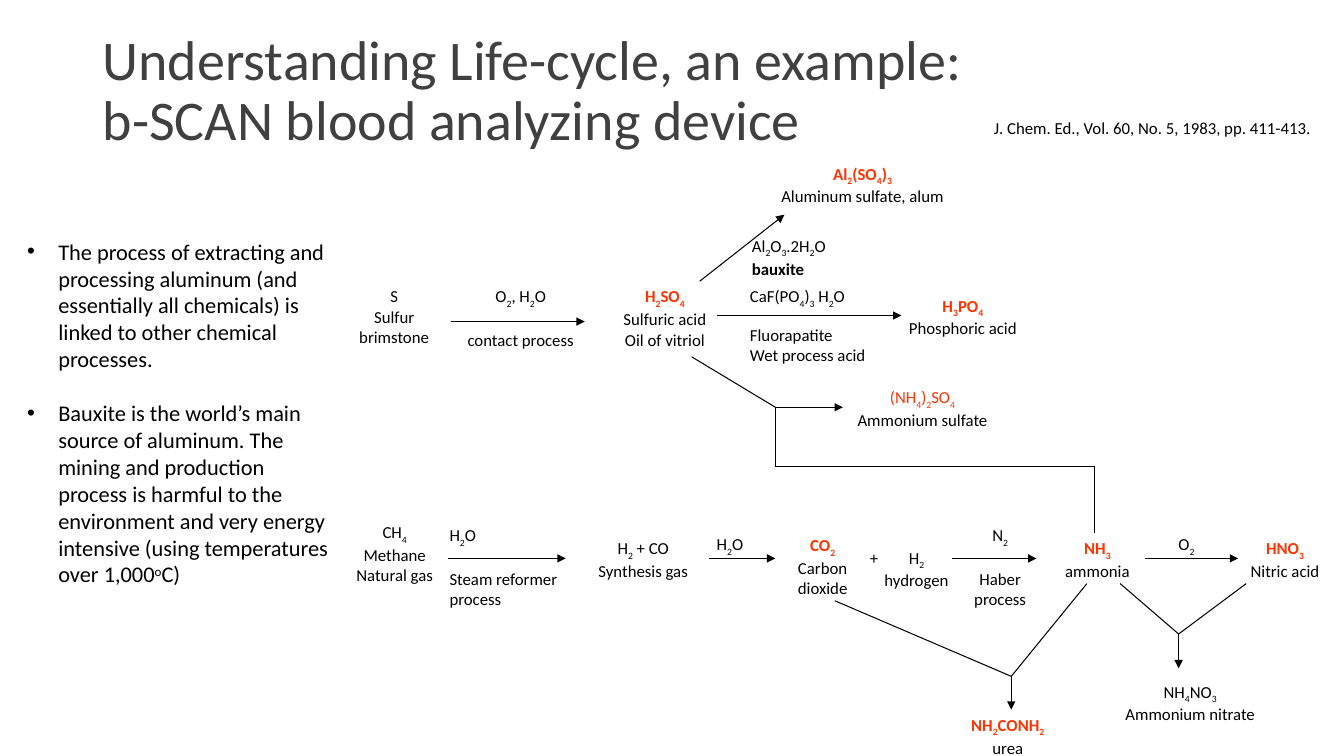
import collections
import itertools

import pptx
import pptx.dml.color
import pptx.enum.shapes
import pptx.enum.text
import pptx.oxml
import pptx.oxml.ns
import pptx.util

Box = collections.namedtuple("Box", "left top width height")
CELL = 0.1
ALIGN = {"left": pptx.enum.text.PP_ALIGN.LEFT, "center": pptx.enum.text.PP_ALIGN.CENTER}
PLAIN = {"size": 12, "color": "000000", "bold": False, "name": "Calibri"}
BOLD = {**PLAIN, "bold": True}
SALT = {**PLAIN, "color": "FF3300"}
PRODUCT = {**SALT, "bold": True}
TITLE = {**PLAIN, "size": 40, "color": "404040"}
BODY = {**PLAIN, "size": 16}
SHIFTS = {"_": "-25000", "^": "30000"}

SULFUR_LABELS = [
    (0.6, 12.9, 9, ["S", "Sulfur", "brimstone"], {}),
    (11.3, 12.9, 12.7, ["O_2, H_2O", "contact process"], {"gap": 14.6}),
    (26.8, 12.9, 10.3, ["H_2SO_4", "Sulfuric acid", "Oil of vitriol"], {"head": PRODUCT}),
    (39.6, 7.9, 9.6, ["Al_2O_3.2H_2O", "bauxite"], {"rest": BOLD, "align": "left"}),
    (42.4, 0.7, 18.3, ["Al_2(SO_4)_3", "Aluminum sulfate, alum"], {"head": PRODUCT}),
    (39.4, 12.9, 13.6, ["CaF(PO_4)_3 H_2O", "Fluorapatite", "Wet process acid"],
     {"align": "left", "gap": 11}),
    (55.1, 13.8, 12.8, ["H_3PO_4", "Phosphoric acid"], {"head": PRODUCT}),
    (50, 22.9, 15, ["(NH_4)_2SO_4", "Ammonium sulfate"], {"head": SALT}),
]
SULFUR_ROUTES = [
    ([(10.7, 16.9), (24, 16.9)], True),
    ([(35.4, 12.9), (43.8, 6.3)], True),
    ([(37.1, 16.3), (55.4, 16.3)], True),
    ([(34.6, 20.4), (42.9, 25.4), (49.6, 25.4)], True),
    ([(42.9, 25.4), (42.9, 31.3), (74.6, 31.3), (74.6, 37.9)], False),
]
AMMONIA_LABELS = [
    (0.3, 1.3, 9.7, ["CH_4", "Methane", "Natural gas"], {}),
    (9.6, 1.6, 13.2, ["H_2O", "Steam reformer", "process"], {"align": "left", "gap": 14.6}),
    (24.3, 2.9, 11, ["H_2 + CO", "Synthesis gas"], {}),
    (36.1, 2.5, 4.8, ["H_2O"], {"align": "left"}),
    (44.1, 2.6, 7, ["CO_2", "Carbon", "dioxide"], {"head": PRODUCT}),
    (51.3, 3.8, 2.8, ["+"], {"align": "left"}),
    (51.9, 3.8, 10, ["H_2", "hydrogen"], {}),
    (61.6, 1.6, 7.2, ["N_2", "Haber", "process"], {"gap": 14.6}),
    (70.6, 2.9, 8.5, ["NH_3", "ammonia"], {"head": PRODUCT}),
    (81.9, 2.5, 3.7, ["O_2"], {"align": "left"}),
    (89, 2.9, 8.9, ["HNO_3", "Nitric acid"], {"head": PRODUCT}),
    (61.2, 20.4, 9.5, ["NH_2CONH_2", "urea"], {"head": PRODUCT}),
    (76.3, 17.1, 15.5, ["NH_4NO_3", "Ammonium nitrate"], {}),
]
AMMONIA_ROUTES = [
    *[([(start, 5.4), (end, 5.4)], True)
      for start, end in [(10.4, 22.1), (36.3, 42.9), (60.4, 68.8), (79.6, 88.8)]],
    ([(48.8, 9.6), (66.3, 17.1), (66.3, 20.4)], True),
    ([(73.8, 7.9), (66.3, 17.1)], False),
    ([(77.1, 7.9), (82.9, 12.9), (82.9, 16.3)], True),
    ([(89.6, 7.9), (82.9, 12.9)], False),
]
BULLETS = [
    "The process of extracting and processing aluminum (and essentially all chemicals) "
    "is linked to other chemical processes.",
    "Bauxite is the world’s main source of aluminum. The mining and production process is "
    "harmful to the environment and very energy intensive (using temperatures over 1,000^oC)",
]


def color(value):
    """Turn a hex string into a colour."""
    return pptx.dml.color.RGBColor.from_string(value)


def cells(count):
    """Turn a number of grid cells into a length."""
    return pptx.util.Inches(count * CELL)


def add_run(paragraph, text, style, shift=None):
    """Add a styled run, raised or lowered when a shift is given."""
    run = paragraph.add_run()
    run.text = text
    values = {**style, "size": pptx.util.Pt(style["size"])}
    run.font.color.rgb = color(values.pop("color"))
    for name, value in values.items():
        setattr(run.font, name, value)
    if shift:
        run._r.get_or_add_rPr().set("baseline", shift)


def write(paragraph, text, style):
    """Write text in which _ lowers and ^ raises the next character."""
    shift, plain = None, ""
    for letter in text:
        if shift:
            add_run(paragraph, letter, style, shift)
            shift = None
        elif letter in SHIFTS:
            if plain:
                add_run(paragraph, plain, style)
            shift, plain = SHIFTS[letter], ""
        else:
            plain += letter
    if plain:
        add_run(paragraph, plain, style)


def add_text(slide, box, lines, head=PLAIN, rest=None, align="left", gap=0, wrap=False):
    """Add a text box with one paragraph per line and a gap before the second."""
    shape = slide.shapes.add_textbox(*map(cells, box))
    frame = shape.text_frame
    frame.word_wrap = wrap
    for index, line in enumerate(lines):
        paragraph = frame.paragraphs[0] if index == 0 else frame.add_paragraph()
        paragraph.alignment = ALIGN[align]
        if index == 1 and gap:
            paragraph.space_before = pptx.util.Pt(gap)
        write(paragraph, line, rest if index and rest else head)
    return frame


def add_route(slide, box, points, arrow):
    """Join points with lines, the last one ending in an arrowhead if asked."""
    pairs = list(itertools.pairwise(points))
    for index, (start, end) in enumerate(pairs):
        ends = [cells(origin + offset) for point in (start, end)
                for origin, offset in zip((box.left, box.top), point)]
        connector = slide.shapes.add_connector(
            pptx.enum.shapes.MSO_CONNECTOR.STRAIGHT, *ends)
        connector.line.color.rgb = color("000000")
        connector.line.width = pptx.util.Pt(0.75)
        if arrow and index == len(pairs) - 1:
            line = connector.line._get_or_add_ln()
            head = line.makeelement(pptx.oxml.ns.qn("a:tailEnd"), {"type": "triangle"})
            line.append(head)
        properties = connector._element.spPr
        properties.append(properties.makeelement(pptx.oxml.ns.qn("a:effectLst"), {}))


def add_reactions(slide, box, labels, routes):
    """Draw a network of reactions from its labels and routes."""
    for points, arrow in routes:
        add_route(slide, box, points, arrow)
    for left, top, width, lines, options in labels:
        place = Box(box.left + left, box.top + top, width, 1 + 2.03 * len(lines))
        add_text(slide, place, lines, **{"rest": PLAIN, "align": "center", **options})


def add_title(slide, box):
    """Write the heading in the middle of its box."""
    lines = ["Understanding Life-cycle, an example:", "b-SCAN blood analyzing device"]
    frame = add_text(slide, box, lines, TITLE, wrap=True)
    frame.vertical_anchor = pptx.enum.text.MSO_ANCHOR.MIDDLE
    for paragraph in frame.paragraphs:
        paragraph.line_spacing = 0.9


def add_bullets(slide, box):
    """Write the bulleted explanation."""
    frame = add_text(slide, box, BULLETS, BODY, gap=19.5, wrap=True)
    for paragraph in frame.paragraphs:
        properties = paragraph._p.get_or_add_pPr()
        for name, value in {"marL": cells(3.1), "indent": -cells(3.1)}.items():
            properties.set(name, str(value))
        for tag, values in {"a:buFont": {"typeface": "Arial"}, "a:buChar": {"char": "•"}}.items():
            properties.append(properties.makeelement(pptx.oxml.ns.qn(tag), values))


def main():
    """Build the slide and save it."""
    presentation = pptx.Presentation()
    presentation.slide_width = pptx.util.Inches(13.33)
    presentation.slide_height = pptx.util.Inches(7.5)
    slide = presentation.slides.add_slide(presentation.slide_layouts[6])
    add_title(slide, Box(9.2, 1.9, 115, 14.5))
    add_text(slide, Box(97.6, 11.2, 33.9, 3),
             ["J. Chem. Ed., Vol. 60, No. 5, 1983, pp. 411-413."])
    add_bullets(slide, Box(1.7, 23.1, 32.8, 38.7))
    add_reactions(slide, Box(34, 15, 75, 38), SULFUR_LABELS, SULFUR_ROUTES)
    add_reactions(slide, Box(34, 50, 98, 25), AMMONIA_LABELS, AMMONIA_ROUTES)
    presentation.save("out.pptx")


if __name__ == "__main__":
    main()
